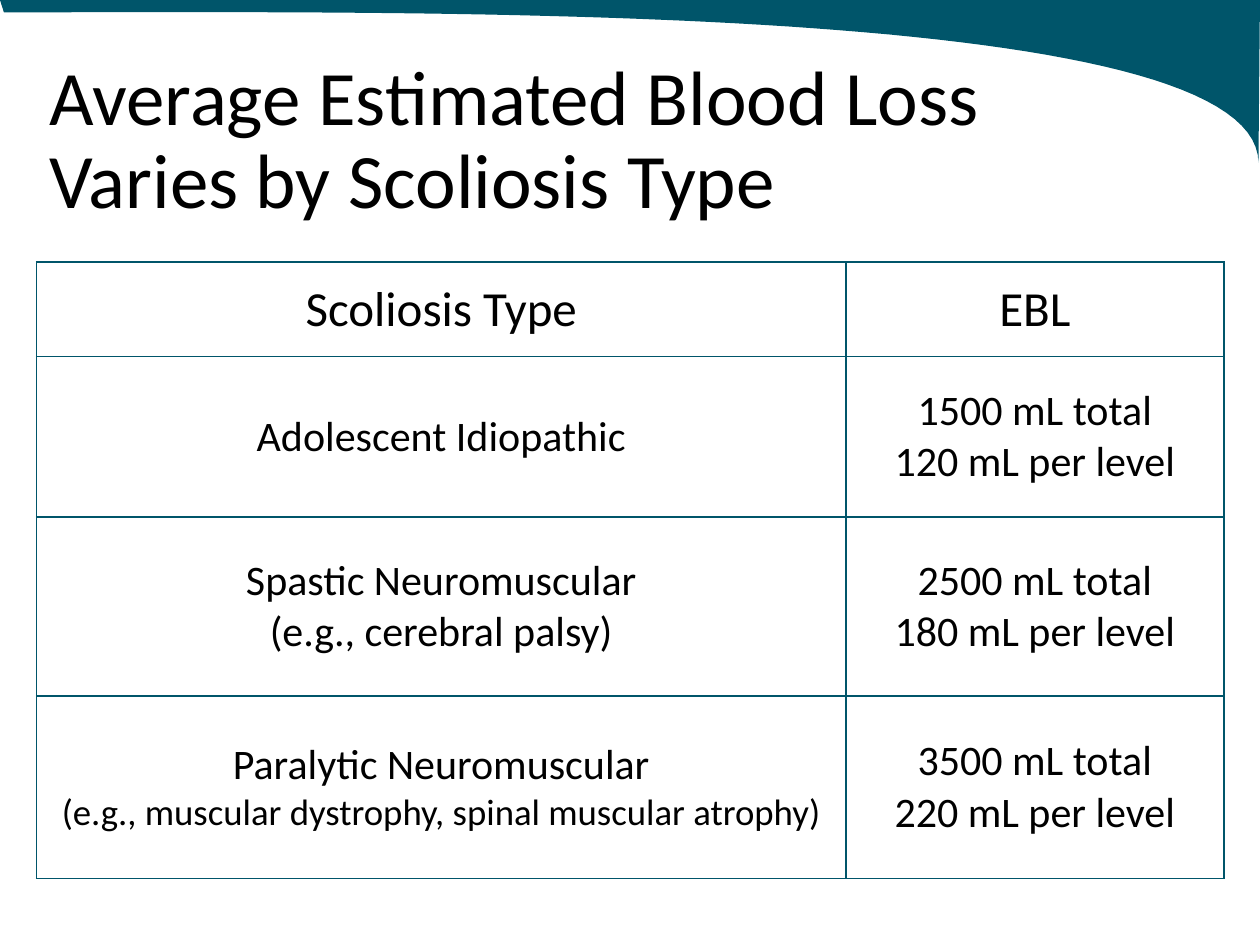
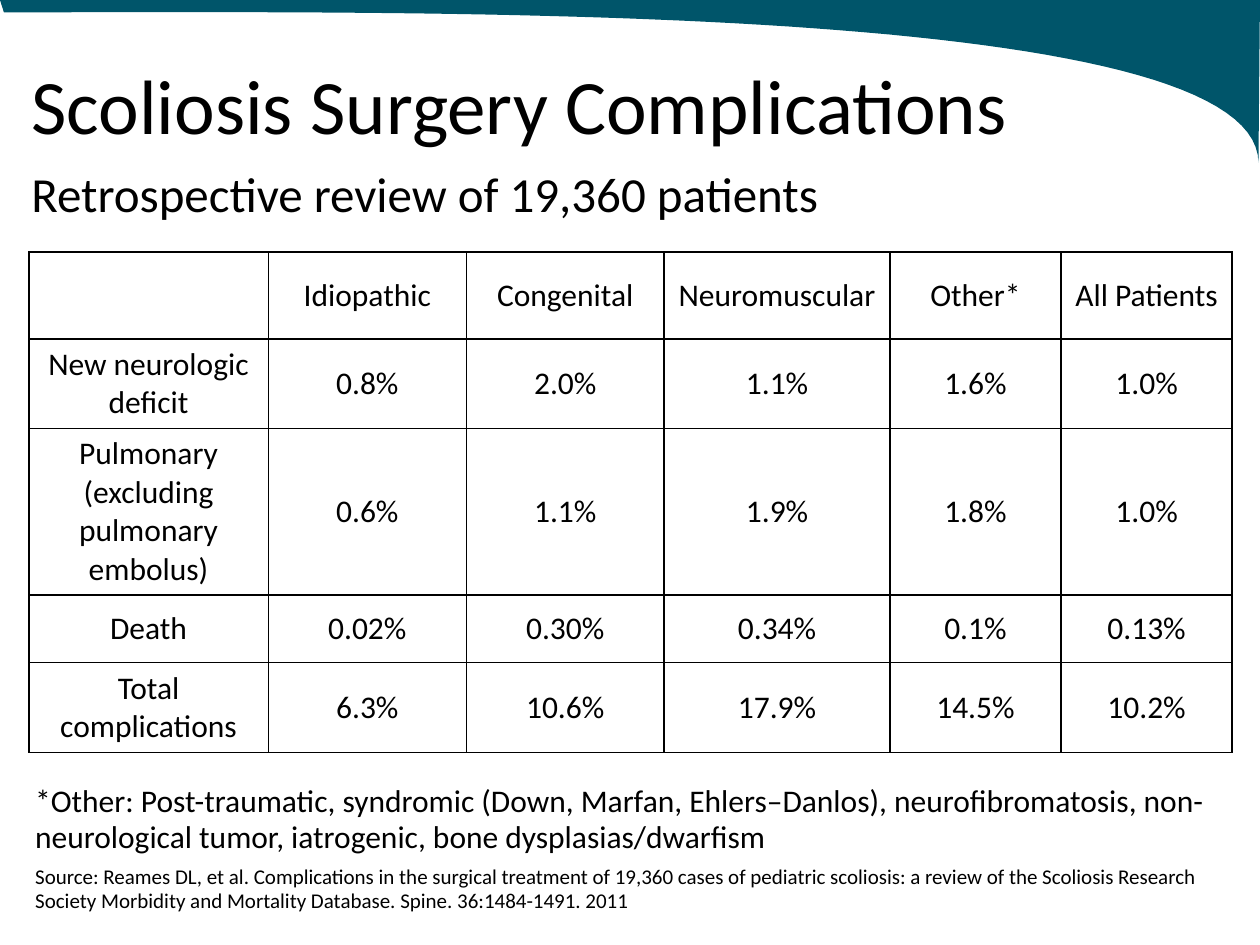
from dataclasses import dataclass

from lxml import etree
from pptx import Presentation
from pptx import util as u
from pptx.dml.color import RGBColor
from pptx.enum import shapes, text
from pptx.oxml.ns import qn

FONT = "Calibri"
COLORS = {"teal": "00556A", "black": "000000", "white": "FFFFFF"}
CURVE = ((25.37, 3.28), (25.35, 0), (8.53, 0.25), (0.08, 0.25))
CURVE_STEPS = 60


@dataclass(frozen=True)
class Box:
    left: float
    top: float
    width: float
    height: float

    def lengths(self) -> tuple:
        return tuple(u.Cm(v) for v in (self.left, self.top, self.width, self.height))


@dataclass(frozen=True)
class Grid:
    left: float
    top: float
    columns: tuple
    rows: tuple
    border: str
    header_size: int
    body_size: int
    content: tuple

    def box(self) -> Box:
        return Box(self.left, self.top, sum(self.columns), sum(self.rows))


BLOOD_LOSS = Grid(
    0.74, 5.28, (16.31, 7.62), (1.91, 3.23, 3.61, 3.68), "teal", 28, 24,
    (
        ("Scoliosis Type", "EBL"),
        ("Adolescent Idiopathic", "1500 mL total\n120 mL per level"),
        ("Spastic Neuromuscular\n(e.g., cerebral palsy)",
         "2500 mL total\n180 mL per level"),
        ("Paralytic Neuromuscular\n(e.g., muscular dystrophy, spinal muscular atrophy)",
         "3500 mL total\n220 mL per level"),
    ),
)
COMPLICATIONS = Grid(
    0.58, 5.08, (4.83, 3.99, 3.99, 4.55, 3.45, 3.45), (1.75, 1.8, 3.35, 1.37, 1.8),
    "black", 18, 18,
    (
        ("", "Idiopathic", "Congenital", "Neuromuscular", "Other*", "All Patients"),
        ("New neurologic deficit", "0.8%", "2.0%", "1.1%", "1.6%", "1.0%"),
        ("Pulmonary (excluding pulmonary embolus)", "0.6%", "1.1%", "1.9%", "1.8%", "1.0%"),
        ("Death", "0.02%", "0.30%", "0.34%", "0.1%", "0.13%"),
        ("Total complications", "6.3%", "10.6%", "17.9%", "14.5%", "10.2%"),
    ),
)
FOOTNOTES = (
    ("*Other: Post-traumatic, syndromic (Down, Marfan, Ehlers–Danlos), neurofibromatosis, "
     "non-neurological tumor, iatrogenic, bone dysplasias/dwarfism", 18),
    ("Source: Reames DL, et al. Complications in the surgical treatment of 19,360 cases of "
     "pediatric scoliosis: a review of the Scoliosis Research Society Morbidity and Mortality "
     "Database. Spine. 36:1484-1491. 2011", 12),
)


def rgb(name: str) -> RGBColor:
    return RGBColor.from_string(COLORS[name])


def format_paragraph(paragraph, size: int, align=text.PP_ALIGN.LEFT) -> None:
    paragraph.alignment = align
    for run in paragraph.runs:
        run.font.name = FONT
        run.font.size = u.Pt(size)
        run.font.color.rgb = rgb("black")


def curve_point(t: float) -> tuple:
    weights = ((1 - t) ** 3, 3 * t * (1 - t) ** 2, 3 * t * t * (1 - t), t ** 3)
    return tuple(
        u.Cm(sum(w * point[axis] for w, point in zip(weights, CURVE))) for axis in (0, 1)
    )


def add_master_band(prs, slide) -> None:
    outline = slide.shapes.build_freeform(0, 0)
    curve = [curve_point(step / CURVE_STEPS) for step in range(CURVE_STEPS + 1)]
    outline.add_line_segments([(prs.slide_width, 0), *curve], close=True)
    band = outline.convert_to_shape()
    band.shadow.inherit = False
    band.fill.solid()
    band.fill.fore_color.rgb = rgb("teal")
    band.line.fill.background()
    prs.slide_master.shapes.element.insert(2, band.element)


def fill_placeholder(holder, content: str, box: Box, size: int) -> None:
    holder.left, holder.top, holder.width, holder.height = box.lengths()
    frame = holder.text_frame
    frame.text = content
    frame.auto_size = text.MSO_AUTO_SIZE.NONE
    paragraph = frame.paragraphs[0]
    paragraph.line_spacing = 0.9
    paragraph.space_before = u.Pt(0)
    format_paragraph(paragraph, size)


def add_title(slide, content: str, box: Box) -> None:
    fill_placeholder(slide.shapes.title, content, box, 44)
    slide.shapes.title.text_frame.vertical_anchor = text.MSO_ANCHOR.MIDDLE


def add_subtitle(slide, content: str, box: Box) -> None:
    body = slide.placeholders[1]
    fill_placeholder(body, content, box, 28)
    properties = body.text_frame.paragraphs[0]._p.get_or_add_pPr()
    properties.set("marL", "0")
    properties.set("indent", "0")
    etree.SubElement(properties, qn("a:buNone"))


def add_borders(cell, color: str) -> None:
    properties = cell._tc.get_or_add_tcPr()
    for side in ("lnL", "lnR", "lnT", "lnB"):
        line = etree.SubElement(properties, qn(f"a:{side}"), w=str(u.Pt(1)))
        fill = etree.SubElement(line, qn("a:solidFill"))
        etree.SubElement(fill, qn("a:srgbClr"), val=COLORS[color])


def add_grid(slide, grid: Grid):
    table = slide.shapes.add_table(
        len(grid.rows), len(grid.columns), *grid.box().lengths()
    ).table
    table.first_row = table.horz_banding = False
    for column, width in zip(table.columns, grid.columns):
        column.width = u.Cm(width)
    for row_index, (height, entries) in enumerate(zip(grid.rows, grid.content)):
        table.rows[row_index].height = u.Cm(height)
        size = grid.body_size if row_index else grid.header_size
        for cell, entry in zip(table.rows[row_index].cells, entries):
            cell.text_frame.text = entry
            cell.vertical_anchor = text.MSO_ANCHOR.MIDDLE
            add_borders(cell, grid.border)
            cell.fill.background()
            for paragraph in cell.text_frame.paragraphs:
                format_paragraph(paragraph, size, text.PP_ALIGN.CENTER)
    return table


def add_footnotes(slide, box: Box) -> None:
    panel = slide.shapes.add_shape(shapes.MSO_SHAPE.RECTANGLE, *box.lengths())
    panel.shadow.inherit = False
    panel.fill.solid()
    panel.fill.fore_color.rgb = rgb("white")
    panel.line.fill.background()
    frame = panel.text_frame
    frame.text = "\n".join(note for note, _ in FOOTNOTES)
    frame.word_wrap = True
    frame.auto_size = text.MSO_AUTO_SIZE.SHAPE_TO_FIT_TEXT
    frame.vertical_anchor = text.MSO_ANCHOR.TOP
    for index, (paragraph, (_, size)) in enumerate(zip(frame.paragraphs, FOOTNOTES)):
        paragraph.line_spacing = 0.95
        paragraph.space_before = u.Pt(0.2 * size if index else 0)
        paragraph.space_after = u.Pt(0.2 * size)
        format_paragraph(paragraph, size)


def main() -> None:
    prs = Presentation()
    prs.slide_width, prs.slide_height = u.Cm(25.4), u.Cm(19.05)
    title_and_body, title_only = prs.slide_layouts[1], prs.slide_layouts[5]

    blood_loss = prs.slides.add_slide(title_only)
    add_master_band(prs, blood_loss)
    add_title(blood_loss, "Average Estimated Blood Loss Varies by Scoliosis Type",
              Box(0.74, 1.02, 20.62, 3.68))
    blood_loss_table = add_grid(blood_loss, BLOOD_LOSS)
    paralytic_examples = blood_loss_table.cell(3, 0).text_frame.paragraphs[1]
    format_paragraph(paralytic_examples, 21, text.PP_ALIGN.CENTER)

    complications = prs.slides.add_slide(title_and_body)
    add_title(complications, "Scoliosis Surgery Complications", Box(0.38, 1.22, 23.19, 1.96))
    add_grid(complications, COMPLICATIONS)
    add_subtitle(complications, "Retrospective review of 19,360 patients",
                 Box(0.38, 3.3, 25.02, 1.4))
    add_footnotes(complications, Box(0.46, 15.67, 24.43, 2.95))

    prs.save("out.pptx")


if __name__ == "__main__":
    main()
